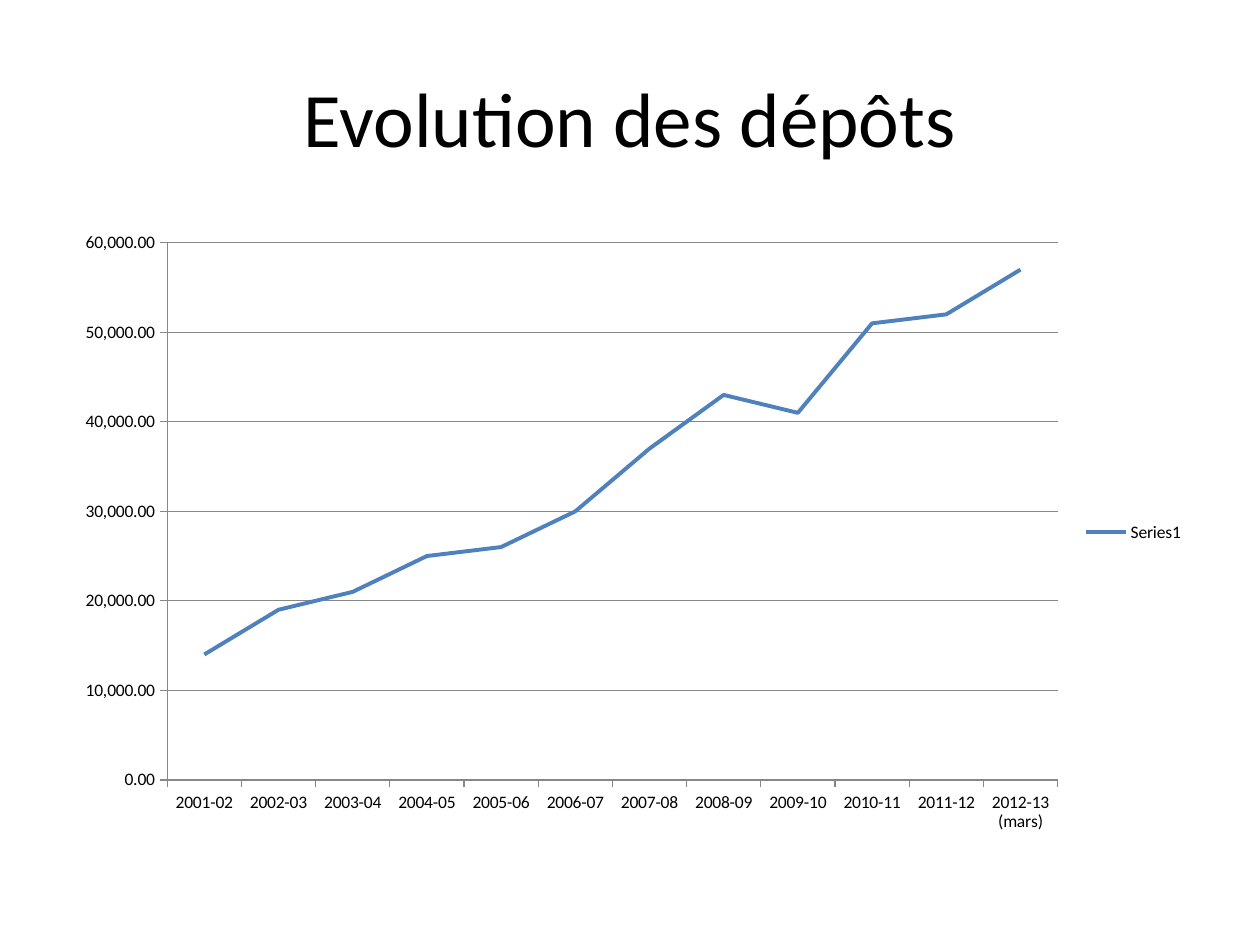
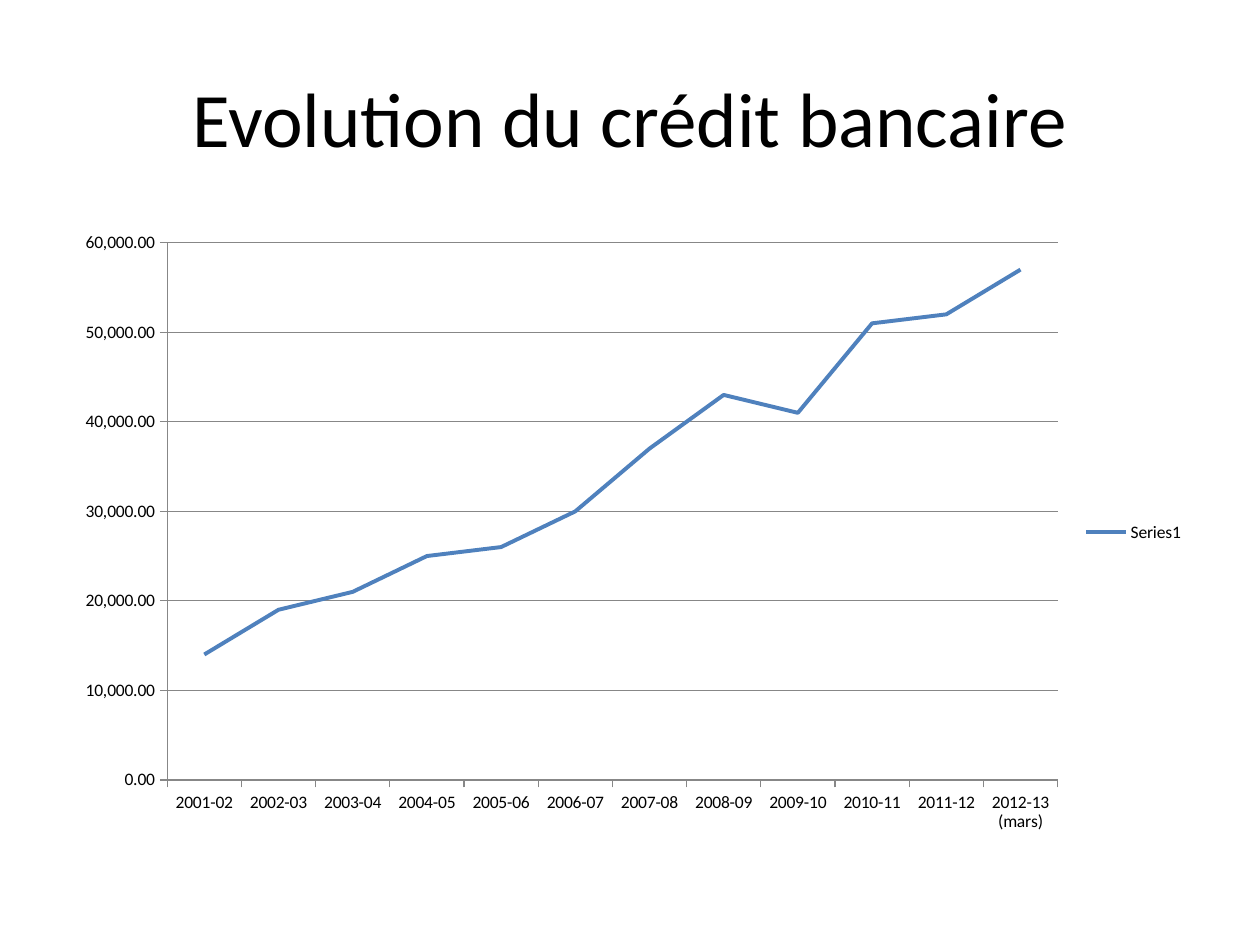
from dataclasses import dataclass

from pptx import Presentation
from pptx import util as u
from pptx.chart import data
from pptx.dml import color
from pptx.enum import chart as ch, text

Pt, RGB = u.Pt, color.RGBColor.from_string


# Theme: colours, type sizes and line widths
@dataclass(frozen=True)
class Theme:
    font: str = "Calibri"
    ink: str = "000000"
    paper: str = "FFFFFF"
    trend: str = "4F81BD"
    rule: str = "878787"
    title_size: float = 44
    chart_size: float = 10
    trend_width: float = 2.25
    rule_width: float = 0.75


# Content
YEARS = [f"20{y:02}-{y + 1:02}" for y in range(1, 12)] + ["2012-13 (mars)"]
AMOUNTS = [14000, 19000, 21000, 25000, 26000, 30000,
           37000, 43000, 41000, 51000, 52000, 57000]
TITLES = ["Evolution des dépôts", "Evolution du crédit bancaire"]

# Geometry: left, top, width, height in points
TITLE_BOX = (36, 21.6, 648, 90)
CHART_BOX = (36, 126, 648, 356.4)


def apply(target, formats):
    for name, value in formats.items():
        setattr(target, name, value)


class Deck:
    def __init__(self, theme):
        self.theme = theme
        self.prs = Presentation()
        apply(self.prs, {"slide_width": Pt(720), "slide_height": Pt(540)})
        self.slide = None

    def new_slide(self):
        self.slide = self.prs.slides.add_slide(self.prs.slide_layouts[6])
        fill = self.slide.background.fill
        fill.solid()
        fill.fore_color.rgb = RGB(self.theme.paper)

    def style_font(self, font, size):
        apply(font, {"name": self.theme.font, "size": Pt(size), "bold": False})
        font.color.rgb = RGB(self.theme.ink)

    def style_line(self, line, rgb, width):
        line.color.rgb = RGB(rgb)
        line.width = Pt(width)

    def title(self, wording):
        frame = self.slide.shapes.add_textbox(*map(Pt, TITLE_BOX)).text_frame
        apply(frame, {"word_wrap": True,
                      "vertical_anchor": text.MSO_ANCHOR.MIDDLE})
        heading = frame.paragraphs[0]
        apply(heading, {"text": wording, "alignment": text.PP_ALIGN.CENTER})
        self.style_font(heading.runs[0].font, self.theme.title_size)

    def trend_chart(self, categories, values):
        theme = self.theme
        figures = data.CategoryChartData(number_format="#,##0.00")
        figures.categories = categories
        figures.add_series("Series1", values)
        chart = self.slide.shapes.add_chart(
            ch.XL_CHART_TYPE.LINE_STACKED, *map(Pt, CHART_BOX), figures).chart
        apply(chart, {"has_title": False, "has_legend": True})
        self.style_font(chart.font, theme.chart_size)
        apply(chart.legend, {"position": ch.XL_LEGEND_POSITION.RIGHT,
                             "include_in_layout": False})

        # Trend line
        plot = chart.plots[0]
        plot.vary_by_categories = False
        trend = plot.series[0]
        trend.smooth = False
        trend.marker.style = ch.XL_MARKER_STYLE.NONE
        self.style_line(trend.format.line, theme.trend, theme.trend_width)

        # Axes and gridlines
        years, amounts = chart.category_axis, chart.value_axis
        years.has_major_gridlines = False
        apply(amounts, {"has_major_gridlines": True, "minimum_scale": 0,
                        "maximum_scale": 60000, "major_unit": 10000})
        apply(amounts.tick_labels, {"number_format": "#,##0.00",
                                    "number_format_is_linked": False})
        for axis in (years, amounts):
            apply(axis, {"major_tick_mark": ch.XL_TICK_MARK.OUTSIDE,
                         "minor_tick_mark": ch.XL_TICK_MARK.NONE})
        for ruled in (years, amounts, amounts.major_gridlines):
            self.style_line(ruled.format.line, theme.rule, theme.rule_width)


def main():
    deck = Deck(Theme())
    for wording in TITLES:
        deck.new_slide()
        deck.title(wording)
        deck.trend_chart(YEARS, AMOUNTS)
    deck.prs.save("out.pptx")


if __name__ == "__main__":
    main()
